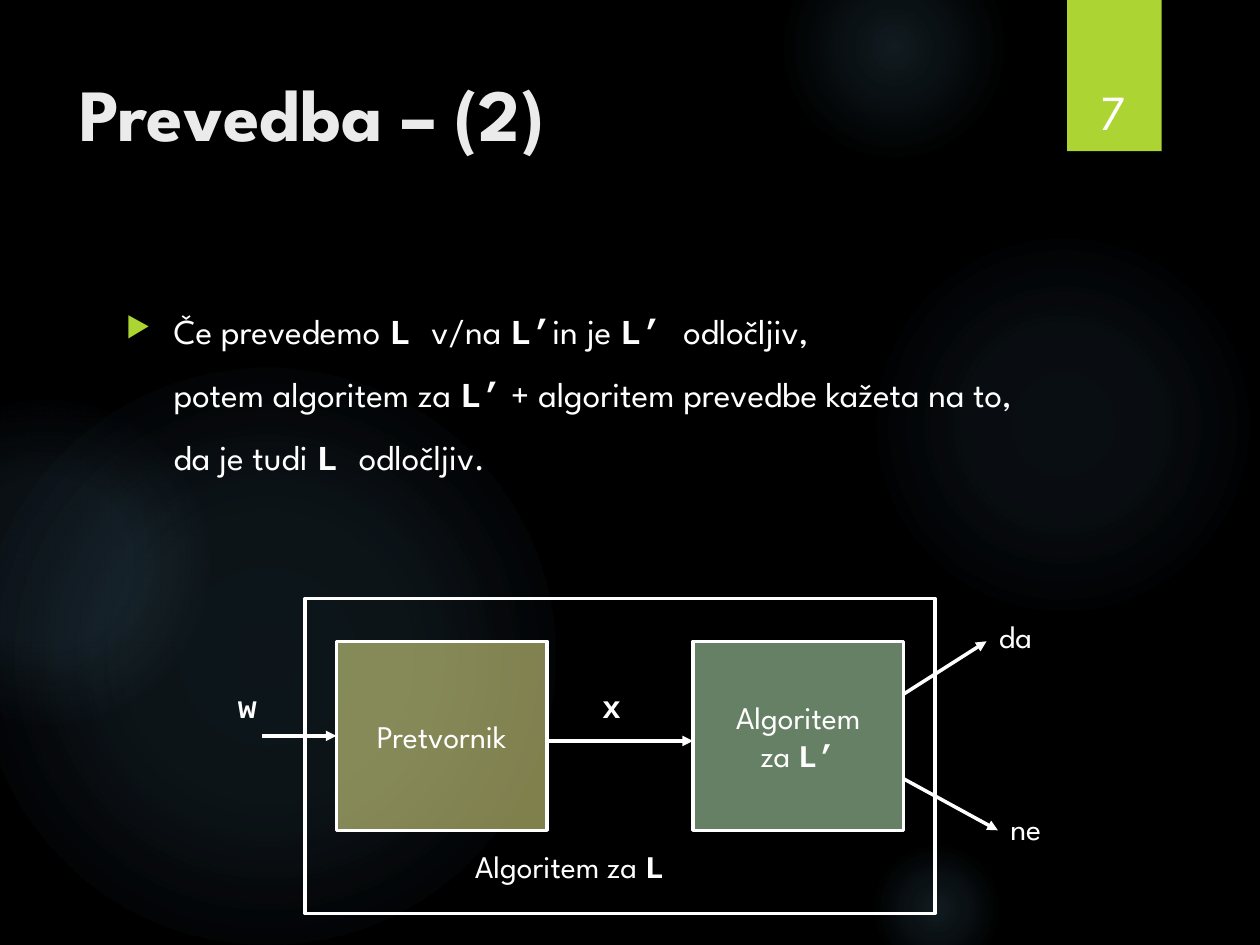
import pptx
import pptx.util
import pptx.dml.color
import pptx.enum.shapes
import pptx.enum.text
import pptx.oxml
import pptx.oxml.ns

Inches, Pt = pptx.util.Inches, pptx.util.Pt
SHAPE = pptx.enum.shapes.MSO_SHAPE
ALIGN = pptx.enum.text.PP_ALIGN
ANCHOR = pptx.enum.text.MSO_ANCHOR
AUTO = pptx.enum.text.MSO_AUTO_SIZE
qn = pptx.oxml.ns.qn
NS = pptx.oxml.ns.nsdecls("a")

SANS, MONO = "League Spartan", "Courier New"
WHITE, LIME, GLOW = "FFFFFF", "ACD433", "7AC4F0"


def color(value):
    return pptx.dml.color.RGBColor.from_string(value)


def add_runs(p, text, size, hex_color=WHITE, bold=False):
    """Fill a paragraph; parts between asterisks are bold monospace."""
    for i, part in enumerate(text.split("*")):
        for j, line in enumerate(part.split("\n")):
            if j:
                p.add_line_break()
            if not line:
                continue
            r = p.add_run()
            r.text = line
            mono = i % 2 == 1
            r.font.name = MONO if mono else SANS
            r.font.size = Pt(size)
            r.font.bold = mono or bold
            r.font.color.rgb = color(hex_color)


def add_text(slide, x, y, w, h, text, size, hex_color=WHITE, bold=False, wrap=True):
    s = slide.shapes.add_textbox(Inches(x), Inches(y), Inches(w), Inches(h))
    tf = s.text_frame
    tf.word_wrap = wrap
    tf.auto_size = AUTO.NONE if wrap else AUTO.SHAPE_TO_FIT_TEXT
    add_runs(tf.paragraphs[0], text, size, hex_color, bold)
    return s


def add_label(slide, x, y, w, text):
    return add_text(slide, x, y, w, 0.4, text, 18, wrap=False)


def add_box(slide, x, y, w, h, fill=None, alpha=None, line=None, kind=SHAPE.RECTANGLE):
    s = slide.shapes.add_shape(kind, Inches(x), Inches(y), Inches(w), Inches(h))
    s.shadow.inherit = False
    if fill:
        s.fill.solid()
        s.fill.fore_color.rgb = color(fill)
    else:
        s.fill.background()
    if alpha:
        rgb = s._element.spPr.find(qn("a:solidFill")).find(qn("a:srgbClr"))
        rgb.append(pptx.oxml.parse_xml(f'<a:alpha {NS} val="{alpha * 1000}"/>'))
    if line:
        s.line.color.rgb = color(line)
        s.line.width = Pt(2)
    else:
        s.line.fill.background()
    return s


def add_arrow(slide, x1, y1, x2, y2):
    s = slide.shapes.add_connector(pptx.enum.shapes.MSO_CONNECTOR.STRAIGHT,
                                   Inches(x1), Inches(y1), Inches(x2), Inches(y2))
    s.line.color.rgb = color(WHITE)
    s.line.width = Pt(2)
    s.line._get_or_add_ln().append(pptx.oxml.parse_xml(f'<a:tailEnd {NS} type="triangle"/>'))
    s._element.spPr.append(pptx.oxml.parse_xml(f"<a:effectLst {NS}/>"))


def add_glow(slide, x, y, d, stops):
    """Circle with a radial gradient; stops are (position, opacity) in percent."""
    s = add_box(slide, x, y, d, d, kind=SHAPE.OVAL)
    gs = "".join(f'<a:gs pos="{pos * 1000}"><a:srgbClr val="{GLOW}">'
                 f'<a:alpha val="{alpha * 1000}"/></a:srgbClr></a:gs>' for pos, alpha in stops)
    grad = pptx.oxml.parse_xml(
        f'<a:gradFill {NS} rotWithShape="1"><a:gsLst>{gs}</a:gsLst><a:path path="circle">'
        '<a:fillToRect l="50000" t="50000" r="50000" b="50000"/></a:path></a:gradFill>')
    spPr = s._element.spPr
    spPr.replace(spPr.find(qn("a:noFill")), grad)


def add_background(slide):
    slide.background.fill.solid()
    slide.background.fill.fore_color.rgb = color("000000")
    for x, y, d, centre, middle, edge in [
        (6.89, 1.83, 3.08, 7, 6, 69),
        (6.22, -0.5, 1.75, 14, 7, 73),
        (6.89, 6.67, 1.08, 14, 7, 66),
        (-0.17, 2.92, 4.58, 11, 10, 75),
        (-0.92, 3.17, 2.58, 8, 8, 72),
    ]:
        add_glow(slide, x, y, d, [(0, centre), (36, middle), (edge, 0)])


def add_page_tab(slide, x, y, w, h, number):
    add_box(slide, x, y, w, h, LIME)
    s = add_text(slide, x + 0.02, y + 0.32, w - 0.06, h - 0.36, number, 28)
    s.text_frame.vertical_anchor = ANCHOR.BOTTOM
    s.text_frame.paragraphs[0].alignment = ALIGN.CENTER


def add_body(slide, x, y, w, h, text):
    s = add_text(slide, x, y, w, h, text, 20)
    p = s.text_frame.paragraphs[0]
    p.line_spacing = 1.5
    pPr = p._p.get_or_add_pPr()
    pPr.set("marL", str(Inches(0.38)))
    pPr.set("indent", str(-Inches(0.38)))
    for bullet in (f'<a:buClr {NS}><a:srgbClr val="{LIME}"/></a:buClr>',
                   f'<a:buSzPct {NS} val="80000"/>',
                   f'<a:buChar {NS} char="▶"/>'):
        pPr.append(pptx.oxml.parse_xml(bullet))


def add_step(slide, x, y, w, h, fill, lines):
    s = add_box(slide, x, y, w, h, fill, alpha=50, line=WHITE)
    tf = s.text_frame
    tf.word_wrap = False
    tf.vertical_anchor = ANCHOR.MIDDLE
    for i, line in enumerate(lines):
        p = tf.add_paragraph() if i else tf.paragraphs[0]
        p.alignment = ALIGN.CENTER
        add_runs(p, line, 18)


def add_diagram(slide, x, y, w, h):
    """Algorithm frame with two steps, an input and two answers."""
    step_w, step_h = 1.67, 1.5
    top = y + 0.34
    first, second = x + 0.25, x + w - 0.25 - step_w
    first_end, second_end = first + step_w, second + step_w

    add_step(slide, first, top, step_w, step_h, "FFFF99", ["Pretvornik"])
    add_arrow(slide, first_end, y + 1.13, second, y + 1.13)
    add_label(slide, x + 2.26, y + 0.65, 0.35, "*x*")
    add_label(slide, x - 0.63, y + 0.65, 0.35, "*w*")
    add_arrow(slide, x - 0.34, y + 1.09, first, y + 1.09)

    add_step(slide, second, top, step_w, step_h, "CCFFCC", ["Algoritem", "za *L’*"])
    add_arrow(slide, second_end, y + 0.76, x + w + 0.41, top)
    add_arrow(slide, second_end, y + 1.43, x + w + 0.5, top + step_h)
    add_label(slide, x + w + 0.41, y + 0.1, 0.55, "da")
    add_label(slide, x + w + 0.5, y + 1.62, 0.52, "ne")

    add_box(slide, x, y, w, h, line=WHITE)
    add_label(slide, x + 1.25, y + 1.92, 1.96, "Algoritem za *L*")


def main():
    prs = pptx.Presentation()
    prs.slide_width, prs.slide_height = Inches(10), Inches(7.5)
    slide = prs.slides.add_slide(prs.slide_layouts[6])
    add_background(slide)
    add_page_tab(slide, 8.47, 0, 0.75, 1.2, "7")
    add_text(slide, 0.53, 0.49, 7.72, 1.53, "Prevedba – (2)", 42, "EBEBEB", bold=True)
    add_body(slide, 0.9, 2.24, 7.34, 4.59,
             "Če prevedemo *L *v/na *L’*in je *L’ *odločljiv,\n"
             "potem algoritem za *L’* + algoritem prevedbe kažeta na to, "
             "da je tudi *L *odločljiv.")
    add_diagram(slide, 2.42, 4.75, 5, 2.5)
    prs.save("out.pptx")


if __name__ == "__main__":
    main()
